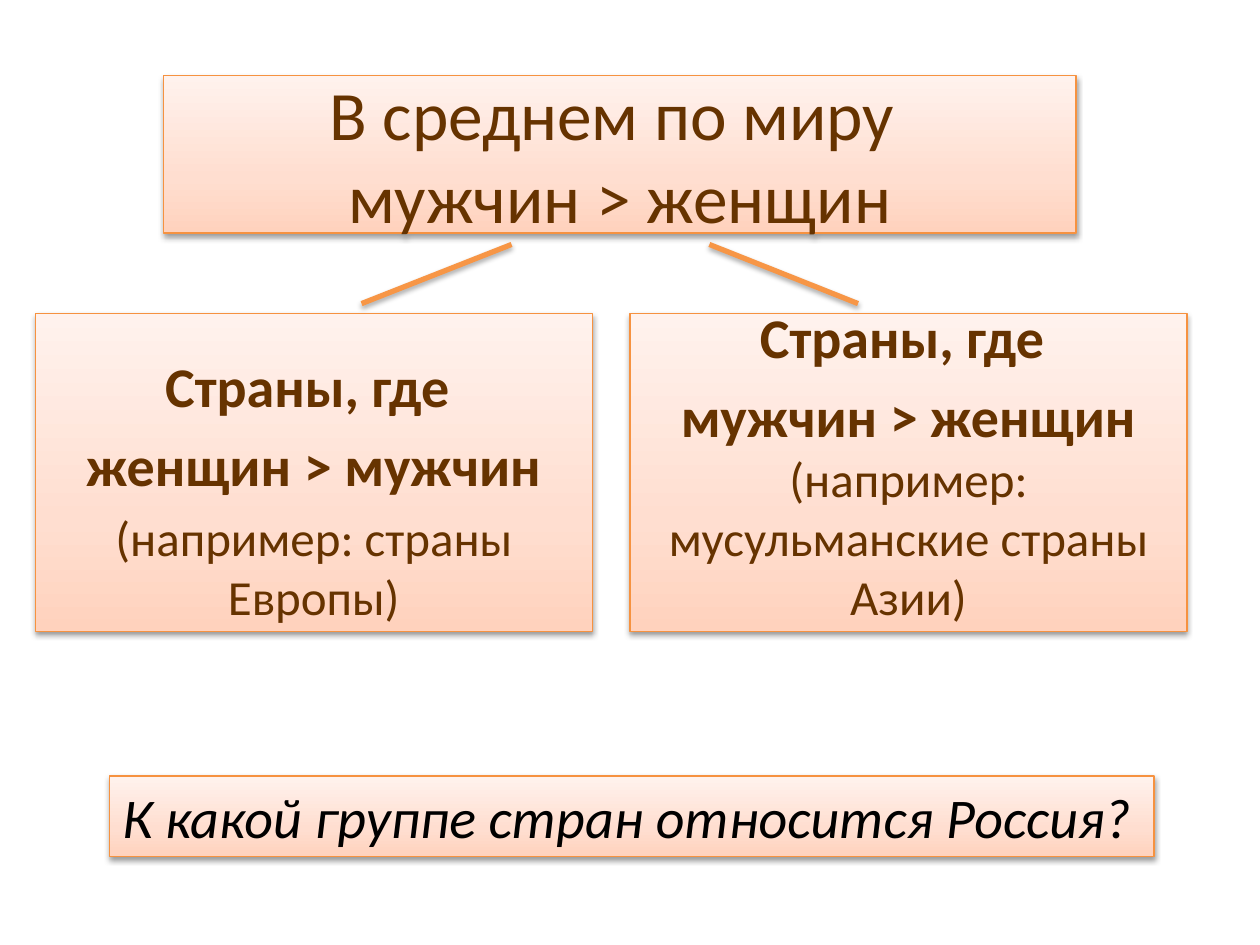
from dataclasses import dataclass

from lxml import etree
from pptx import Presentation
from pptx.dml.color import RGBColor
from pptx.enum import shapes, text
from pptx.oxml.ns import qn
from pptx.util import Emu, Inches, Pt

WIDTH, HEIGHT = Inches(10), Inches(7.5)
FONT = "Calibri"
BROWN = RGBColor(0x66, 0x33, 0x00)
BLACK = RGBColor(0x00, 0x00, 0x00)
BORDER = RGBColor(0xF6, 0x92, 0x40)
BRANCH = RGBColor(0xF7, 0x96, 0x46)
PEACH_STOPS = (
    (0, RGBColor(0xFF, 0xD2, 0xBD)),
    (35, RGBColor(0xFF, 0xDE, 0xD0)),
    (100, RGBColor(0xFF, 0xF2, 0xED)),
)


@dataclass(frozen=True)
class Area:
    """A rectangle in percent of the slide's width and height."""
    left: float
    top: float
    width: float
    height: float


@dataclass(frozen=True)
class Run:
    words: str
    size: float
    bold: bool = False


@dataclass(frozen=True)
class CountryGroup:
    left: float
    paragraphs: tuple[tuple[Run, ...], ...]


@dataclass(frozen=True)
class Branch:
    start_x: float
    end_x: float


TITLE_AREA = Area(13, 8, 72.4, 16.67)
QUESTION_AREA = Area(8.7, 82.13, 82.9, 8.53)
GROUP_TOP, GROUP_WIDTH, GROUP_HEIGHT = 33.2, 44.2, 33.6
BRANCH_TOP, BRANCH_BOTTOM = 25.87, 32.13

HEADING = (Run("Страны, где ", 32, True),)
GROUPS = (
    CountryGroup(2.8, (
        HEADING,
        (Run("женщин > мужчин", 32, True),),
        (Run("(например: страны Европы)", 28),),
    )),
    CountryGroup(50, (
        HEADING,
        (Run("мужчин > женщин ", 32, True),
         Run("(например: мусульманские страны Азии)", 28)),
    )),
)
BRANCHES = (Branch(40.6, 28.7), Branch(56.3, 68.1))


def across(percent: float) -> Emu:
    return Emu(round(WIDTH * percent / 100))


def down(percent: float) -> Emu:
    return Emu(round(HEIGHT * percent / 100))


def place(shape, area: Area) -> None:
    shape.left, shape.top = across(area.left), down(area.top)
    shape.width, shape.height = across(area.width), down(area.height)


def add_shadow(shape, alpha: int, distance: float) -> None:
    """Cast a soft black shadow downwards; call after fill and line are set."""
    effects = etree.SubElement(shape._element.spPr, qn("a:effectLst"))
    shadow = etree.SubElement(
        effects, qn("a:outerShdw"), blurRad=str(Pt(3.1)),
        dist=str(Pt(distance)), dir="5400000", rotWithShape="0")
    color = etree.SubElement(shadow, qn("a:srgbClr"), val="000000")
    etree.SubElement(color, qn("a:alpha"), val=str(alpha * 1000))


def style_panel(shape) -> None:
    """Give a shape the peach gradient, orange border and shadow."""
    shape.fill.gradient()
    shape.fill.gradient_angle = 90
    stops = shape._element.spPr.find(f".//{qn('a:gsLst')}")
    for stop in list(stops):
        stops.remove(stop)
    for position, color in PEACH_STOPS:
        stop = etree.SubElement(stops, qn("a:gs"), pos=str(position * 1000))
        etree.SubElement(stop, qn("a:srgbClr"), val=str(color))
    shape.line.color.rgb = BORDER
    shape.line.width = Pt(0.75)
    add_shadow(shape, alpha=38, distance=1.6)


def write(shape, paragraphs, *, color=BROWN, align=text.PP_ALIGN.CENTER,
          anchor=text.MSO_ANCHOR.MIDDLE, wrap=True, italic=False,
          auto_size=text.MSO_AUTO_SIZE.NONE) -> None:
    frame = shape.text_frame
    frame.word_wrap, frame.auto_size = wrap, auto_size
    frame.vertical_anchor = anchor
    for index, runs in enumerate(paragraphs):
        paragraph = frame.add_paragraph() if index else frame.paragraphs[0]
        paragraph.alignment = align
        paragraph.space_before = Pt(runs[0].size * 0.2 if index else 0)
        for item in runs:
            for number, line in enumerate(item.words.split("\n")):
                if number:
                    paragraph.add_line_break()
                run = paragraph.add_run()
                run.text = line
                font = run.font
                font.name, font.size = FONT, Pt(item.size)
                font.bold, font.italic = item.bold, italic
                font.color.rgb = color


def add_group(slide, group: CountryGroup) -> None:
    shape = slide.shapes.add_shape(shapes.MSO_SHAPE.RECTANGLE, 0, 0, 0, 0)
    place(shape, Area(group.left, GROUP_TOP, GROUP_WIDTH, GROUP_HEIGHT))
    style_panel(shape)
    write(shape, group.paragraphs, anchor=text.MSO_ANCHOR.BOTTOM)


def add_branch(slide, branch: Branch) -> None:
    connector = slide.shapes.add_connector(
        shapes.MSO_CONNECTOR.STRAIGHT, across(branch.start_x),
        down(BRANCH_TOP), across(branch.end_x), down(BRANCH_BOTTOM))
    connector.line.color.rgb = BRANCH
    connector.line.width = Pt(3)
    add_shadow(connector, alpha=35, distance=1.8)


def main() -> None:
    presentation = Presentation()
    presentation.slide_width, presentation.slide_height = WIDTH, HEIGHT
    slide = presentation.slides.add_slide(presentation.slide_layouts[5])

    title = slide.shapes.title
    place(title, TITLE_AREA)
    style_panel(title)
    write(title, ((Run("В среднем по миру \nмужчин > женщин", 39.6),),))

    for group in GROUPS:
        add_group(slide, group)
    for branch in BRANCHES:
        add_branch(slide, branch)

    question = slide.shapes.add_textbox(0, 0, 0, 0)
    place(question, QUESTION_AREA)
    style_panel(question)
    write(question, ((Run("К какой группе стран относится Россия?", 32),),),
          color=BLACK, align=text.PP_ALIGN.LEFT, anchor=text.MSO_ANCHOR.TOP,
          wrap=False, italic=True,
          auto_size=text.MSO_AUTO_SIZE.SHAPE_TO_FIT_TEXT)

    presentation.save("out.pptx")


if __name__ == "__main__":
    main()
